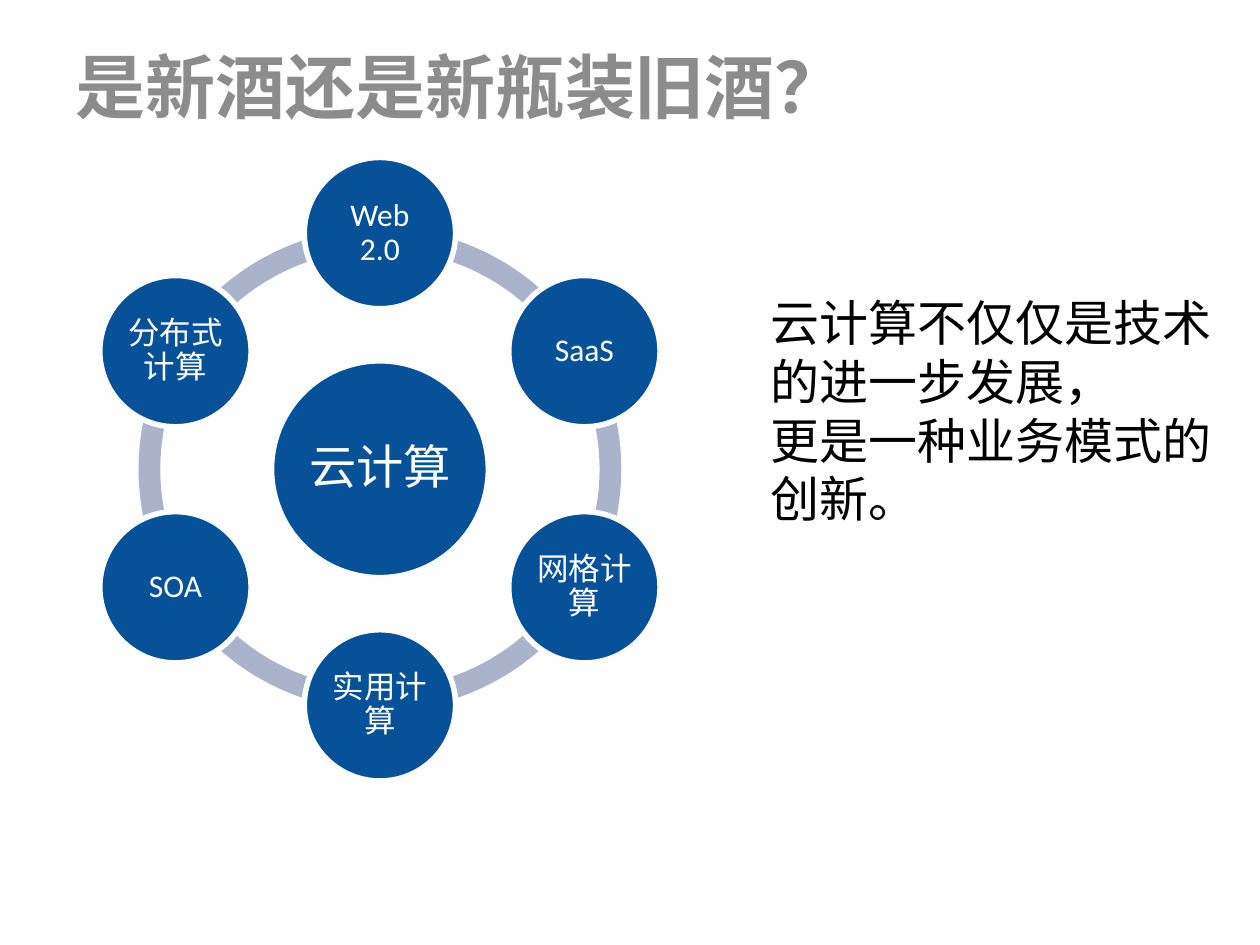
import math
from dataclasses import dataclass

from pptx import Presentation
from pptx.dml.color import RGBColor
from pptx.enum.shapes import MSO_SHAPE
from pptx.enum.text import MSO_ANCHOR, PP_ALIGN
from pptx.oxml import parse_xml
from pptx.oxml.ns import nsdecls
from pptx.util import Cm, Pt

OVAL, ARC = MSO_SHAPE.OVAL, MSO_SHAPE.BLOCK_ARC
TOP, MIDDLE = MSO_ANCHOR.TOP, MSO_ANCHOR.MIDDLE
LEFT, CENTER = PP_ALIGN.LEFT, PP_ALIGN.CENTER


@dataclass(frozen=True)
class Theme:
    font: str = "Calibri"
    disc: str = "075198"
    ring: str = "ABB3CA"
    white: str = "FFFFFF"
    text: str = "000000"
    title_stops: tuple = ((0, "404040"), (78, "8C8C8C"), (100, "F4F4F4"))
    title_size: float = 40
    body_size: float = 28
    hub_size: float = 27
    node_size: float = 18
    outline: float = 3.15


@dataclass(frozen=True)
class Disc:
    label: str
    x: float  # centre, cm
    y: float
    diameter: float
    size: float
    inset: float


THEME = Theme()

# Wheel geometry in cm
CX, CY = 7.66, 9.46
ORBIT, RING_DIAMETER, RING_THICKNESS = 4.76, 9.73, 0.045
HUB_DIAMETER, NODE_DIAMETER = 4.37, 3.05
NODES = ["Web 2.0", "SaaS", "网格计算", "实用计算", "SOA", "分布式计算"]
STEP = 360 / len(NODES)
ARC_UNIT = 0.6  # adjustment value per degree


def write(tf, *lines: str, size: float, color: str | None = None, bold: bool = False,
          align=LEFT, anchor=TOP, spacing: float | None = None,
          inset: float | None = None) -> None:
    """Fill a text frame, one paragraph per line."""
    tf.word_wrap = True
    tf.vertical_anchor = anchor
    if inset is not None:
        tf.margin_left = tf.margin_right = tf.margin_top = tf.margin_bottom = Cm(inset)
    for i, line in enumerate(lines):
        p = tf.add_paragraph() if i else tf.paragraphs[0]
        p.alignment = align
        p.line_spacing = spacing
        r = p.add_run()
        r.text = line
        r.font.name, r.font.size, r.font.bold = THEME.font, Pt(size), bold
        if color:
            r.font.color.rgb = RGBColor.from_string(color)


def add_round(shapes, kind, x: float, y: float, diameter: float, fill: str):
    """Add a filled round shape centred on x, y."""
    s = shapes.add_shape(kind, Cm(x - diameter / 2), Cm(y - diameter / 2),
                         Cm(diameter), Cm(diameter))
    s.shadow.inherit = False
    s.fill.solid()
    s.fill.fore_color.rgb = RGBColor.from_string(fill)
    s.line.fill.background()
    return s


def add_arc(shapes, start: float) -> None:
    s = add_round(shapes, ARC, CX, CY, RING_DIAMETER, THEME.ring)
    s.adjustments[0] = start % 360 * ARC_UNIT
    s.adjustments[1] = (start + STEP) % 360 * ARC_UNIT
    s.adjustments[2] = RING_THICKNESS


def add_disc(shapes, disc: Disc) -> None:
    s = add_round(shapes, OVAL, disc.x, disc.y, disc.diameter, THEME.disc)
    s.line.color.rgb = RGBColor.from_string(THEME.white)
    s.line.width = Pt(THEME.outline)
    write(s.text_frame, disc.label, size=disc.size, color=THEME.white,
          align=CENTER, anchor=MIDDLE, spacing=0.9, inset=disc.inset)


def apply_gradient(r, stops: tuple) -> None:
    """Give a run a vertical gradient fill."""
    gs = "".join(f'<a:gs pos="{pos * 1000}"><a:srgbClr val="{color}"/></a:gs>'
                 for pos, color in stops)
    r.font._element.insert(0, parse_xml(
        f'<a:gradFill {nsdecls("a")}><a:gsLst>{gs}</a:gsLst>'
        '<a:lin ang="5400000"/></a:gradFill>'))


def main() -> None:
    prs = Presentation()
    prs.slide_width, prs.slide_height = Cm(25.4), Cm(19.05)
    slide = prs.slides.add_slide(prs.slide_layouts[5])

    # Title
    title = slide.shapes.title
    title.left, title.top, title.width, title.height = Cm(1.27), Cm(0.76), Cm(22.86), Cm(3.18)
    write(title.text_frame, "是新酒还是新瓶装旧酒？", size=THEME.title_size, bold=True)
    apply_gradient(title.text_frame.paragraphs[0].runs[0], THEME.title_stops)

    # Wheel: ring, hub, then nodes clockwise from the top
    wheel = slide.shapes.add_group_shape().shapes
    angles = [270 + i * STEP for i in range(len(NODES))]
    for angle in angles:
        add_arc(wheel, angle)
    add_disc(wheel, Disc("云计算", CX, CY, HUB_DIAMETER, THEME.hub_size, 0.1))
    for label, angle in zip(NODES, angles):
        a = math.radians(angle)
        add_disc(wheel, Disc(label, CX + ORBIT * math.cos(a), CY + ORBIT * math.sin(a),
                             NODE_DIAMETER, THEME.node_size, 0.08))

    # Conclusion
    box = slide.shapes.add_textbox(Cm(15.29), Cm(5.77), Cm(9.4), Cm(5.05))
    write(box.text_frame, "云计算不仅仅是技术的进一步发展，", "更是一种业务模式的创新。",
          size=THEME.body_size, color=THEME.text)

    prs.save("out.pptx")


if __name__ == "__main__":
    main()
